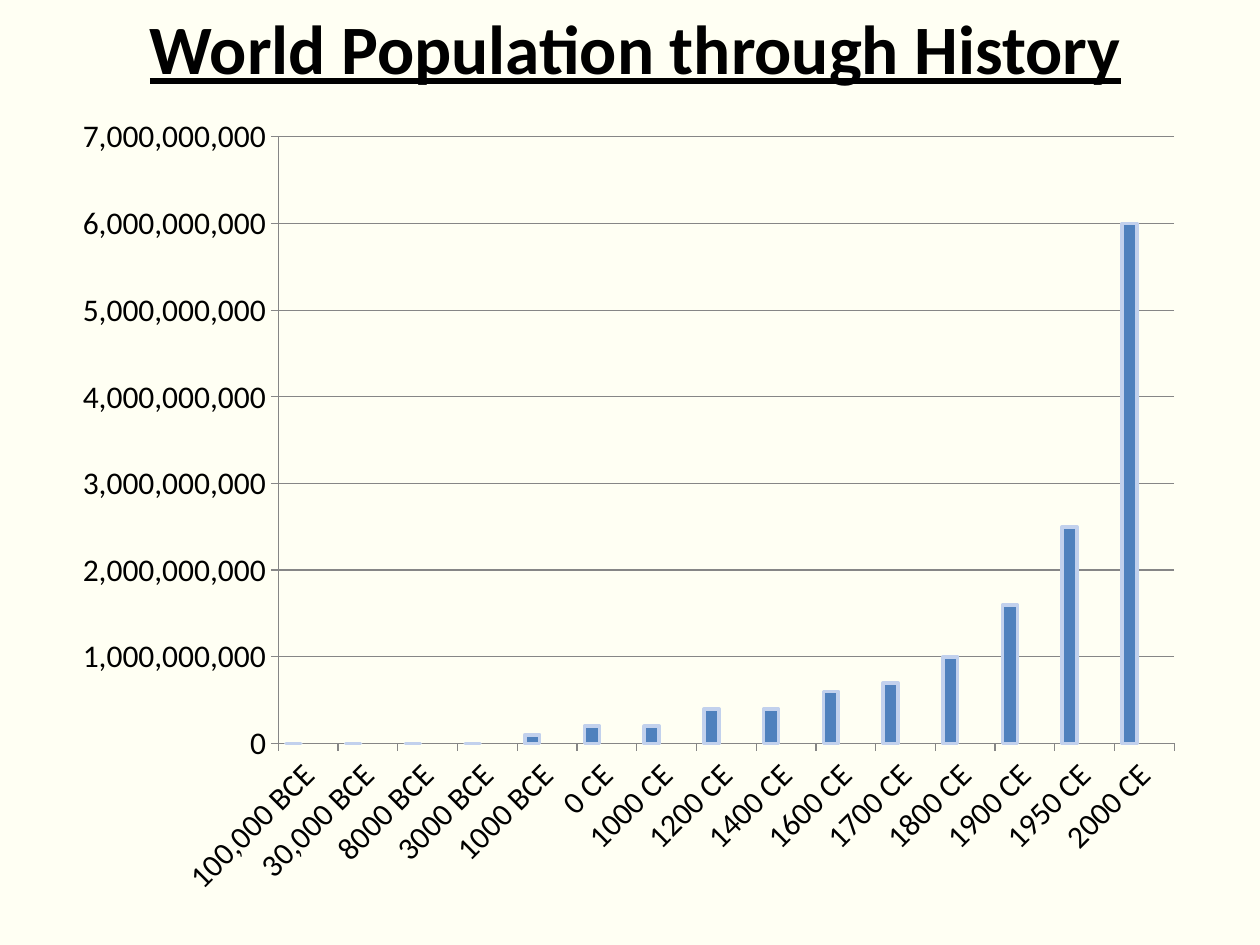
from lxml import etree
from pptx import Presentation
from pptx.chart.data import CategoryChartData
from pptx.dml.color import RGBColor
from pptx.enum import chart as ch, text
from pptx.oxml import ns
from pptx.util import Inches, Pt

# Content
TITLE = "World Population through History"
MILLION = 1_000_000
POPULATION = [  # era, millions of people
    ("100,000 BCE", 0), ("30,000 BCE", 0), ("8000 BCE", 0), ("3000 BCE", 0),
    ("1000 BCE", 100), ("0 CE", 200), ("1000 CE", 200), ("1200 CE", 400),
    ("1400 CE", 400), ("1600 CE", 600), ("1700 CE", 700), ("1800 CE", 1000),
    ("1900 CE", 1600), ("1950 CE", 2500), ("2000 CE", 6000),
]
EMPTY_SERIES = ["Series 2", "Series 3"]
PLOT_AREA = {"x": 0.19, "y": 0.04, "w": 0.79, "h": 0.75}  # shares of the chart

FONT = "Calibri"
IVORY = RGBColor(0xFF, 0xFF, 0xF3)
BLACK = RGBColor(0, 0, 0)
GRAY = RGBColor(0x86, 0x86, 0x86)
BLUE = RGBColor(0x4F, 0x81, 0xBD)
PALE_BLUE = RGBColor(0xC2, 0xD1, 0xED)
RED = RGBColor(0xC0, 0x50, 0x4D)
GREEN = RGBColor(0x9B, 0xBB, 0x59)

deck = Presentation()
deck.slide_width, deck.slide_height = Inches(10), Inches(7.5)
slide = deck.slides.add_slide(deck.slide_layouts[5])
slide.background.fill.solid()
slide.background.fill.fore_color.rgb = IVORY

# Title
title = slide.shapes.title
title.left, title.top = Inches(0.17), Inches(0.08)
title.width, title.height = Inches(9.75), Inches(0.58)
frame = title.text_frame
frame.auto_size = text.MSO_AUTO_SIZE.NONE
frame.vertical_anchor = text.MSO_ANCHOR.MIDDLE
heading = frame.paragraphs[0]
heading.alignment = text.PP_ALIGN.CENTER
run = heading.add_run()
run.text = TITLE
run.font.name, run.font.size = FONT, Pt(39.6)
run.font.bold = run.font.underline = True
run.font.color.rgb = BLACK

# Population chart
data = CategoryChartData(number_format="#,##0")
data.categories = [era for era, _ in POPULATION]
data.add_series("Series 1", [people * MILLION for _, people in POPULATION])
for name in EMPTY_SERIES:
    data.add_series(name, [None] * len(POPULATION))
chart = slide.shapes.add_chart(
    ch.XL_CHART_TYPE.COLUMN_CLUSTERED,
    Inches(0.5), Inches(0.83), Inches(9), Inches(6.42), data).chart
chart.has_legend = chart.has_title = False
chart.font.name, chart.font.size = FONT, Pt(18)
chart.font.color.rgb = BLACK

bars = chart.plots[0]
bars.gap_width, bars.overlap = 100, 0
bars.vary_by_categories = False
for series, color in zip(bars.series, (BLUE, RED, GREEN)):
    series.format.fill.solid()
    series.format.fill.fore_color.rgb = color
outline = bars.series[0].format.line
outline.color.rgb, outline.width = PALE_BLUE, Pt(2)

# Axes
eras, people = chart.category_axis, chart.value_axis
people.minimum_scale, people.maximum_scale = 0, 7000 * MILLION
people.major_unit = 1000 * MILLION
people.has_major_gridlines = True
people.tick_labels.number_format = "#,##0"
people.tick_labels.number_format_is_linked = False
for axis in (eras, people):
    axis.major_tick_mark = ch.XL_TICK_MARK.OUTSIDE
    axis.minor_tick_mark = ch.XL_TICK_MARK.NONE
for part in (eras, people, people.major_gridlines):
    part.format.line.color.rgb = GRAY
    part.format.line.width = Pt(0.75)

# Slanted era labels
labels = eras.tick_labels.font
labels.name, labels.size = FONT, Pt(18)
labels.color.rgb = BLACK
eras._element.find(".//" + ns.qn("a:bodyPr")).set("rot", str(-45 * 60000))

# Fixed inner plot area
plot_area = chart._chartSpace.find(".//" + ns.qn("c:plotArea"))
layout = plot_area.find(ns.qn("c:layout"))
if layout is None:
    layout = etree.Element(ns.qn("c:layout"))
    plot_area.insert(0, layout)
manual = etree.SubElement(layout, ns.qn("c:manualLayout"))
settings = [("layoutTarget", "inner"), ("xMode", "edge"), ("yMode", "edge")]
for tag, value in settings + list(PLOT_AREA.items()):
    etree.SubElement(manual, ns.qn("c:" + tag)).set("val", str(value))

deck.save("out.pptx")
